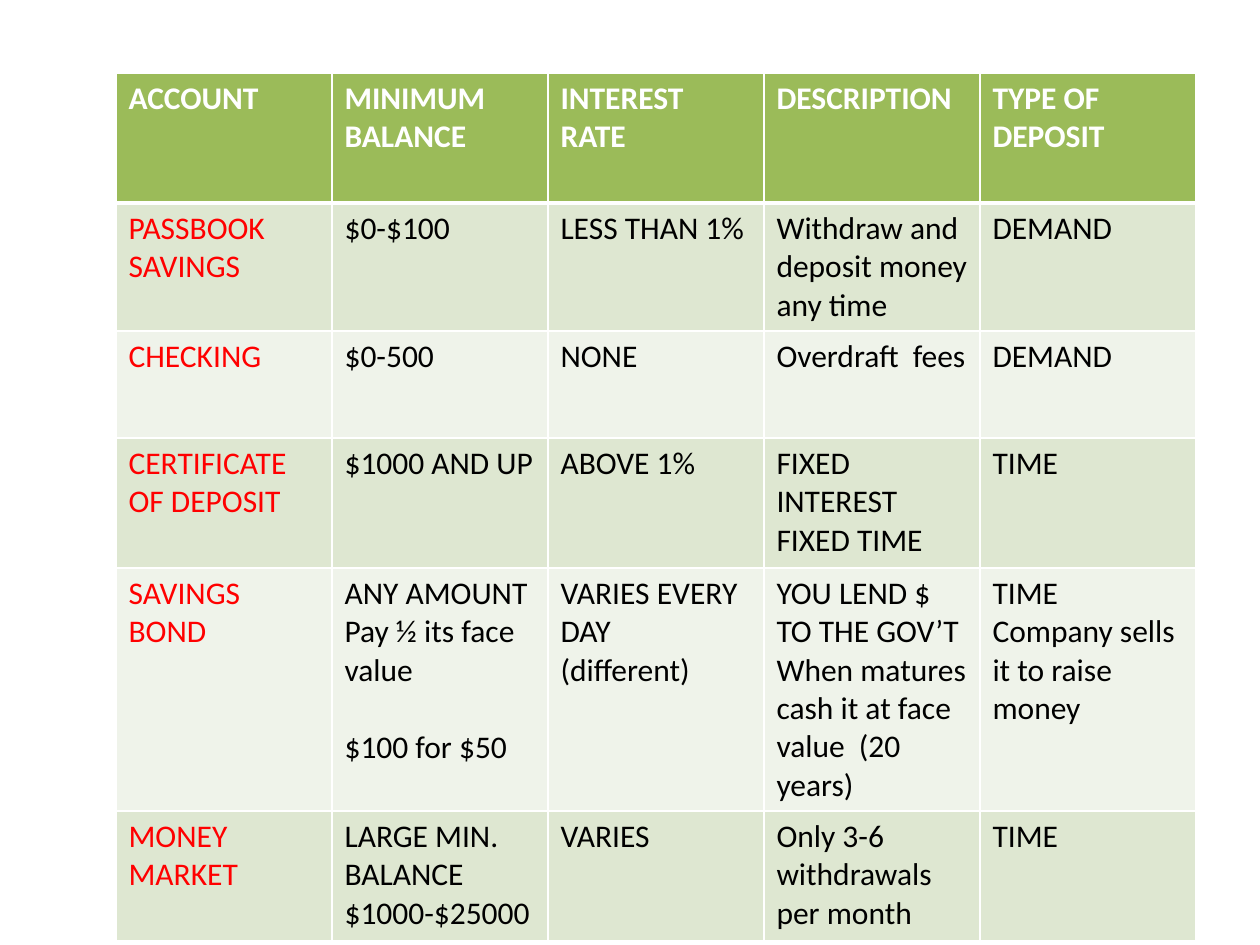
from lxml import etree
from pptx import Presentation
from pptx.dml.color import RGBColor
from pptx.oxml.ns import qn
from pptx.util import Pt

WHITE = RGBColor(0xFF, 0xFF, 0xFF)
BLACK = RGBColor(0x00, 0x00, 0x00)
RED = RGBColor(0xFF, 0x00, 0x00)
GREEN = RGBColor(0x9B, 0xBB, 0x59)
BANDS = [RGBColor(0xEF, 0xF3, 0xEA), RGBColor(0xDE, 0xE7, 0xD1)]

EMU_PER_PX = 914400 / 126
GAP = "\v"  # marks a paragraph set one line lower

HEADERS = ["ACCOUNT", "MINIMUM BALANCE", "INTEREST RATE", "DESCRIPTION",
           "TYPE OF DEPOSIT"]
ACCOUNTS = [
    ["PASSBOOK SAVINGS", "$0-$100", "LESS THAN 1%",
     "Withdraw and deposit money any time", "DEMAND"],
    ["CHECKING", "$0-500", "NONE", "Overdraft  fees", "DEMAND"],
    ["CERTIFICATE OF DEPOSIT", "$1000 AND UP", "ABOVE 1%",
     "FIXED INTEREST\nFIXED TIME", "TIME"],
    ["SAVINGS BOND",
     "ANY AMOUNT\nPay ½ its face value\n" + GAP + "$100 for $50",
     "VARIES EVERY DAY\n(different)",
     "YOU LEND $ TO THE GOV’T\n"
     "When matures cash it at face value  (20 years)",
     "TIME\nCompany sells it to raise money"],
    ["MONEY MARKET", "LARGE MIN. BALANCE\n$1000-$25000", "VARIES",
     "Only 3-6 withdrawals per month", "TIME"],
]
ROW_HEIGHTS = [130, 122, 107, 130, 130, 130]


def px(n):
    return round(n * EMU_PER_PX)


class Deck:
    font = "Calibri"
    size = Pt(18)
    line_gap = Pt(22)

    def __init__(self, width, height):
        self.prs = Presentation()
        self.prs.slide_width, self.prs.slide_height = px(width), px(height)
        self.s = self.prs.slides.add_slide(self.prs.slide_layouts[6])

    def table(self, left, top, col_width, height, row_heights, rows):
        n = len(rows[0])
        frame = self.s.shapes.add_table(len(rows), n, px(left), px(top),
                                        px(col_width * n), px(height))
        table = frame.table
        for col in table.columns:
            col.width = px(col_width)
        for i, (row_height, texts) in enumerate(zip(row_heights, rows)):
            table.rows[i].height = px(row_height)
            for j, text in enumerate(texts):
                header = i == 0
                color = WHITE if header else RED if j == 0 else BLACK
                fill = GREEN if header else BANDS[i % 2]
                cell = table.cell(i, j)
                self.cell(cell, text, color, fill, header)
                # The rule under the header is heavier
                self.borders(cell, L=1, R=1, T=3 if i == 1 else 1,
                             B=3 if header else 1)
        frame.height = px(height)

    def cell(self, cell, text, color, fill, bold):
        cell.fill.solid()
        cell.fill.fore_color.rgb = fill
        tf = cell.text_frame
        tf.text = text.replace(GAP, "")
        for p, line in zip(tf.paragraphs, text.split("\n")):
            if line.startswith(GAP):
                p.space_before = self.line_gap
            for r in p.runs:
                r.font.name, r.font.size = self.font, self.size
                r.font.bold = bold
                r.font.color.rgb = color

    def borders(self, cell, **widths):
        tc_pr = cell._tc.get_or_add_tcPr()
        for k, (side, width) in enumerate(widths.items()):
            ln = etree.Element(qn("a:ln" + side), w=str(Pt(width)))
            fill = etree.SubElement(ln, qn("a:solidFill"))
            etree.SubElement(fill, qn("a:srgbClr"), val=str(WHITE))
            tc_pr.insert(k, ln)


def main():
    deck = Deck(1260, 945)
    # Comparison of account types
    deck.table(116, 73, 216, 863, ROW_HEIGHTS, [HEADERS] + ACCOUNTS)
    deck.prs.save("out.pptx")


if __name__ == "__main__":
    main()
